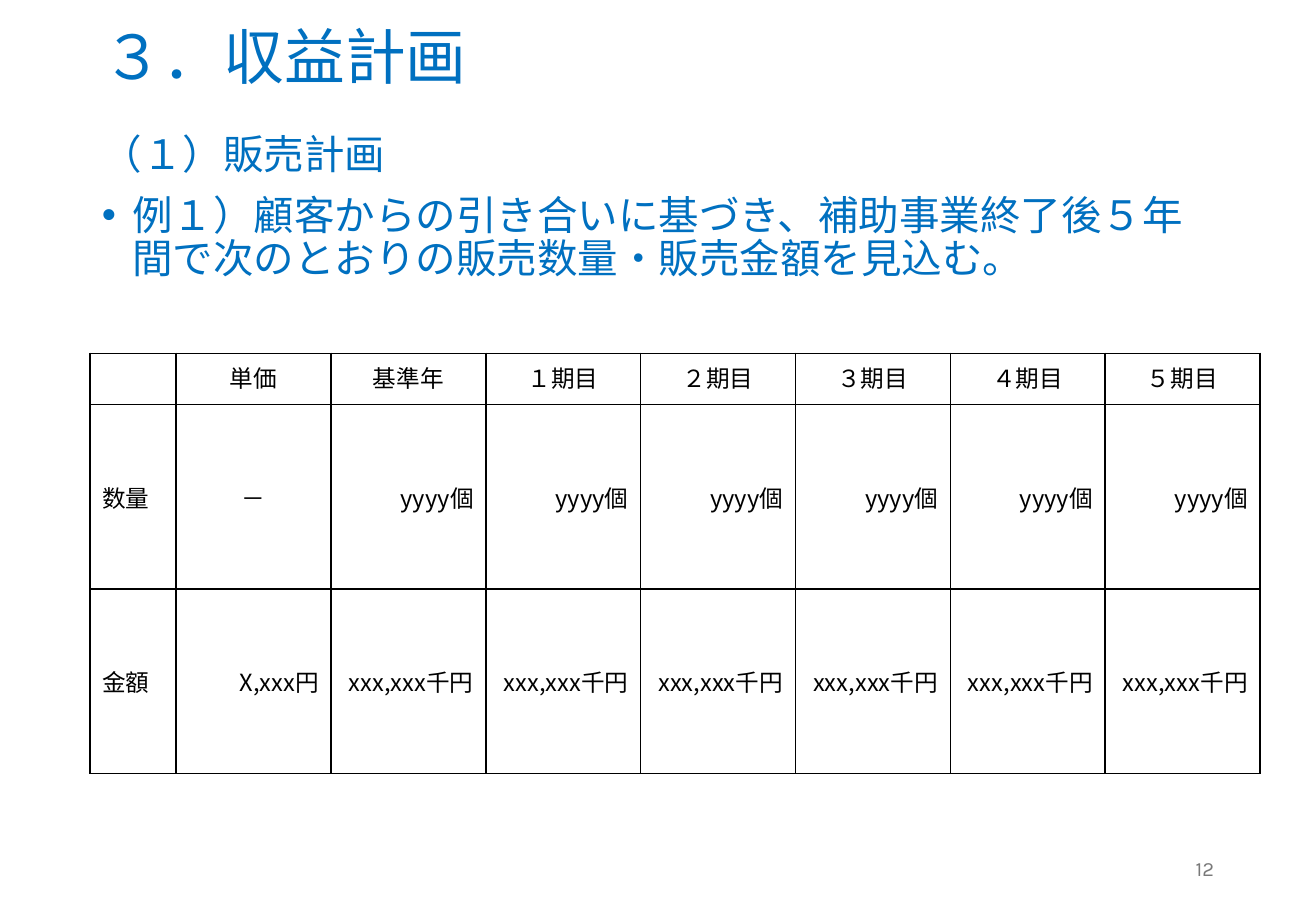
from lxml import etree
from pptx import Presentation
from pptx.dml.color import RGBColor
from pptx.enum.text import MSO_ANCHOR, MSO_AUTO_SIZE, PP_ALIGN
from pptx.oxml.ns import qn
from pptx.util import Inches, Pt

BLUE = RGBColor(0x00, 0x70, 0xC0)
BLACK = RGBColor(0x00, 0x00, 0x00)
GRAY = RGBColor(0x79, 0x79, 0x79)
JAPANESE_FONT = "Noto Sans CJK JP"
NUMBER_FONT = "Karla"
LEFT, CENTER, RIGHT = PP_ALIGN.LEFT, PP_ALIGN.CENTER, PP_ALIGN.RIGHT
TOP, MIDDLE = MSO_ANCHOR.TOP, MSO_ANCHOR.MIDDLE
NO_AUTOFIT = MSO_AUTO_SIZE.NONE
TITLE_ONLY = 5

PERIODS = ["１期目", "２期目", "３期目", "４期目", "５期目"]
SALES_ROWS = [
    ["", "単価", "基準年"] + PERIODS,
    ["数量", "－"] + ["yyyy個"] * 6,
    ["金額", "X,xxx円"] + ["xxx,xxx千円"] * 6,
]


class SlideBuilder:
    """Holds the text style and the current slide."""

    def __init__(self, presentation):
        layout = presentation.slide_layouts[TITLE_ONLY]
        self.slide = presentation.slides.add_slide(layout)

    def style(self, paragraph, size, color, align=LEFT, name=JAPANESE_FONT):
        paragraph.alignment = align
        font = paragraph.font
        font.size = Pt(size)
        font.name = name
        font.color.rgb = color
        latin = paragraph._p.pPr.find(qn("a:defRPr")).find(qn("a:latin"))
        east_asian = etree.Element(qn("a:ea"), typeface=name)
        latin.addnext(east_asian)

    def title(self, text, left, top, width, height):
        shape = self.slide.shapes.title
        shape.left, shape.top = Inches(left), Inches(top)
        shape.width, shape.height = Inches(width), Inches(height)
        frame = shape.text_frame
        frame.text = text
        frame.auto_size = NO_AUTOFIT
        frame.vertical_anchor = MIDDLE
        paragraph = frame.paragraphs[0]
        paragraph.line_spacing = 0.9
        self.style(paragraph, 36, BLUE)

    def text_box(self, left, top, width, height, anchor=TOP):
        box = self.slide.shapes.add_textbox(
            Inches(left), Inches(top), Inches(width), Inches(height))
        frame = box.text_frame
        frame.word_wrap = True
        frame.vertical_anchor = anchor
        return frame

    def body(self, heading, bullet, left, top, width, height):
        frame = self.text_box(left, top, width, height)
        first = frame.paragraphs[0]
        second = frame.add_paragraph()
        first.text, second.text = heading, bullet
        second.space_before = Pt(10)
        self.add_bullet(second, 0.25)
        for paragraph in (first, second):
            paragraph.line_spacing = 0.9
            self.style(paragraph, 24, BLUE)

    def add_bullet(self, paragraph, indent):
        properties = paragraph._p.get_or_add_pPr()
        properties.set("marL", str(Inches(indent)))
        properties.set("indent", str(-Inches(indent)))
        etree.SubElement(properties, qn("a:buFont"), typeface="Arial")
        etree.SubElement(properties, qn("a:buChar"), char="•")

    def add_borders(self, cell):
        properties = cell._tc.get_or_add_tcPr()
        for side in ("a:lnL", "a:lnR", "a:lnT", "a:lnB"):
            line = etree.SubElement(properties, qn(side), w=str(Pt(1)))
            fill = etree.SubElement(line, qn("a:solidFill"))
            etree.SubElement(fill, qn("a:srgbClr"), val=str(BLACK))

    def table(self, rows, column_widths, row_heights, left, top):
        table = self.slide.shapes.add_table(
            len(rows), len(column_widths), Inches(left), Inches(top),
            Inches(sum(column_widths)), Inches(sum(row_heights))).table
        table.first_row = table.horz_banding = False
        for column, width in zip(table.columns, column_widths):
            column.width = Inches(width)
        for row, height in zip(table.rows, row_heights):
            row.height = Inches(height)
        for row_index, values in enumerate(rows):
            for column_index, value in enumerate(values):
                cell = table.cell(row_index, column_index)
                cell.text = value
                self.add_borders(cell)
                cell.fill.background()
                cell.vertical_anchor = MIDDLE if row_index else TOP
                if row_index == 0 or value == "－":
                    align = CENTER
                else:
                    align = RIGHT if column_index else LEFT
                self.style(cell.text_frame.paragraphs[0], 14, BLACK, align)

    def page_number(self, number, left, top, width, height):
        frame = self.text_box(left, top, width, height, MIDDLE)
        frame.text = str(number)
        self.style(frame.paragraphs[0], 12, GRAY, RIGHT, NUMBER_FONT)


def main():
    presentation = Presentation()
    presentation.slide_width = Inches(10.83)
    presentation.slide_height = Inches(7.5)
    builder = SlideBuilder(presentation)

    # Title and introduction
    builder.title("３．収益計画", 0.74, 0.11, 9.34, 0.77)
    builder.body(
        "（１）販売計画",
        "例１）顧客からの引き合いに基づき、補助事業終了後５年間で"
        "次のとおりの販売数量・販売金額を見込む。",
        0.74, 1.06, 9.34, 5.7)

    # Sales plan: a label column and seven equal value columns
    value_width = (9.63 - 0.71) / 7
    builder.table(SALES_ROWS, [0.71] + [value_width] * 7,
                  [0.42, 1.52, 1.52], 0.74, 2.91)

    # Page number
    builder.page_number(12, 7.65, 6.95, 2.44, 0.4)

    presentation.save("out.pptx")


if __name__ == "__main__":
    main()
